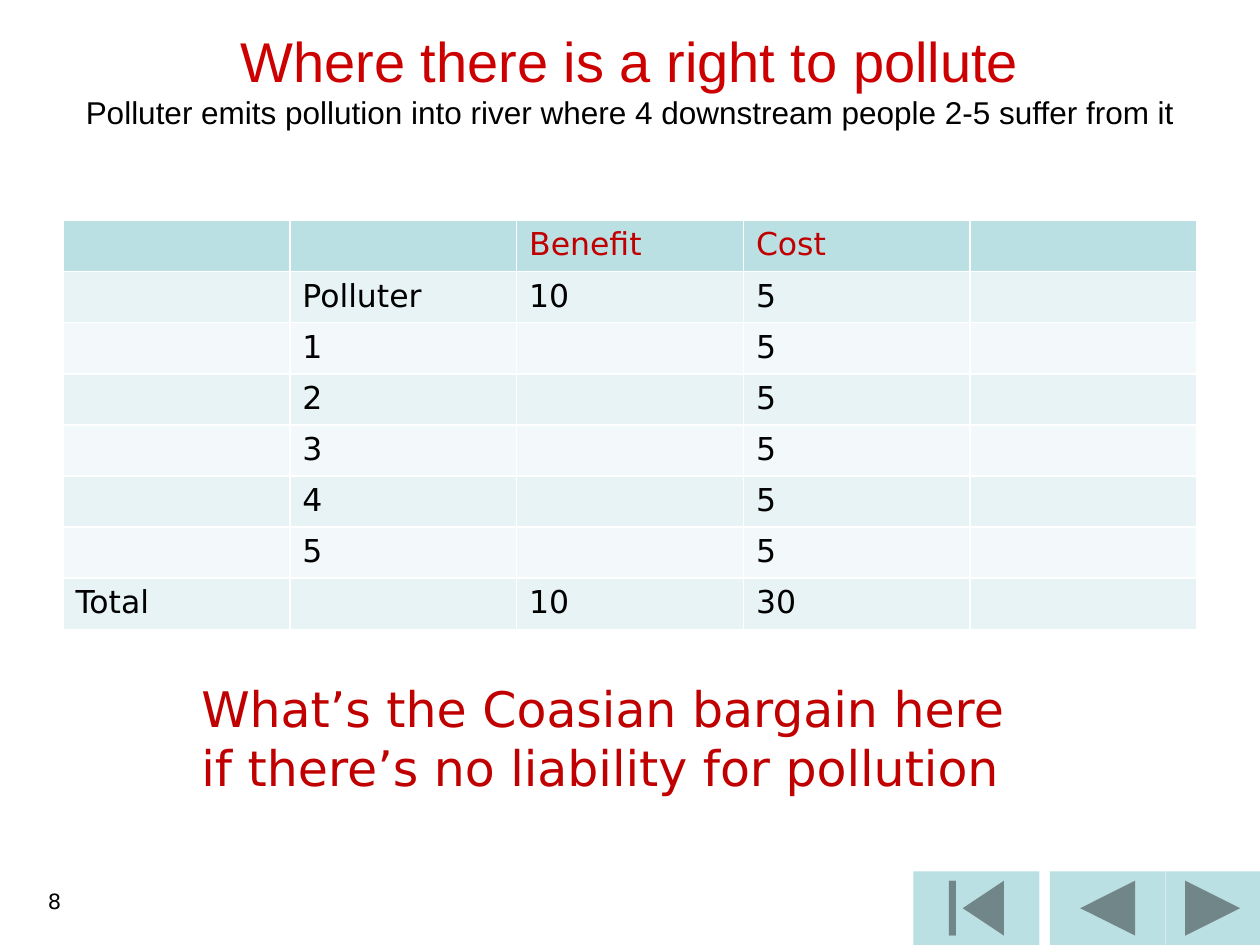
from dataclasses import dataclass

from lxml import etree
from pptx import Presentation
from pptx.dml.color import RGBColor
from pptx.enum.shapes import MSO_SHAPE
from pptx.enum.text import MSO_ANCHOR, PP_ALIGN
from pptx.oxml.ns import qn
from pptx.util import Pt

LEFT, CENTER, RIGHT = PP_ALIGN.LEFT, PP_ALIGN.CENTER, PP_ALIGN.RIGHT
TOP, MIDDLE = MSO_ANCHOR.TOP, MSO_ANCHOR.MIDDLE
BACK = MSO_SHAPE.ACTION_BUTTON_BACK_OR_PREVIOUS
BEGINNING = MSO_SHAPE.ACTION_BUTTON_BEGINNING
FORWARD = MSO_SHAPE.ACTION_BUTTON_FORWARD_OR_NEXT

COLORS = {
    "title": "CC0000",
    "accent": "C00000",
    "text": "000000",
    "teal": "BBE0E3",
    "odd_row": "E7F3F4",
    "even_row": "F3F9FA",
    "border": "FFFFFF",
}
BODY_FONT = "DejaVu Sans"
TITLE_FONT = "Arial"

ROWS = [
    ("", "", "Benefit", "Cost", ""),
    ("", "Polluter", "10", "5", ""),
    *[("", str(person), "", "5", "") for person in range(1, 6)],
    ("Total", "", "10", "30", ""),
]
COLUMN_WIDTH, ROW_HEIGHT = 129.6, 29.15


@dataclass
class Button:
    kind: MSO_SHAPE
    left: float
    width: float


@dataclass
class Style:
    size: float
    color: str
    font: str = BODY_FONT


@dataclass
class TextBox:
    """Text with one style for each run, in reading order."""
    text: str
    box: tuple[float, float, float, float]
    styles: list[Style]
    align: PP_ALIGN = LEFT
    anchor: MSO_ANCHOR = TOP
    wrap: bool = True


BUTTONS = [
    Button(BACK, 600, 66),
    Button(BEGINNING, 522, 72),
    Button(FORWARD, 666, 54),
]
QUESTION = Style(28, "accent")
TEXT_BOXES = [
    TextBox(
        "Where there is a right to pollute\v"
        "Polluter emits pollution into river where 4 downstream people 2-5 suffer from it",
        (0, 0, 720, 90),
        [Style(32, "title", TITLE_FONT), Style(18, "text", TITLE_FONT)],
        CENTER, MIDDLE,
    ),
    TextBox("8", (-108, 504, 150, 36), [Style(12, "text")], RIGHT),
    TextBox(
        "What’s the Coasian bargain here\nif there’s no liability for pollution",
        (108, 384, 488, 75), [QUESTION, QUESTION], wrap=False,
    ),
]


def rgb(name: str) -> RGBColor:
    return RGBColor.from_string(COLORS[name])


def format_run(r, style: Style) -> None:
    r.font.name = style.font
    r.font.size = Pt(style.size)
    r.font.bold = False
    r.font.color.rgb = rgb(style.color)


def add_button(slide, button: Button) -> None:
    s = slide.shapes.add_shape(
        button.kind, Pt(button.left), Pt(498), Pt(button.width), Pt(42))
    s.shadow.inherit = False
    s.fill.solid()
    s.fill.fore_color.rgb = rgb("teal")
    s.line.fill.background()


def add_text(slide, item: TextBox) -> None:
    tf = slide.shapes.add_textbox(*map(Pt, item.box)).text_frame
    tf.word_wrap = item.wrap
    tf.vertical_anchor = item.anchor
    tf.text = item.text
    for p in tf.paragraphs:
        p.alignment = item.align
    runs = [r for p in tf.paragraphs for r in p.runs]
    for r, style in zip(runs, item.styles):
        format_run(r, style)


def add_borders(cell) -> None:
    tc_pr = cell._tc.get_or_add_tcPr()
    for side in ("a:lnL", "a:lnR", "a:lnT", "a:lnB"):
        line = etree.SubElement(tc_pr, qn(side), w=str(Pt(1)))
        fill = etree.SubElement(line, qn("a:solidFill"))
        etree.SubElement(fill, qn("a:srgbClr"), val=COLORS["border"])


def add_cost_table(slide) -> None:
    n_rows, n_cols = len(ROWS), len(ROWS[0])
    table = slide.shapes.add_table(
        n_rows, n_cols, Pt(36), Pt(126),
        Pt(n_cols * COLUMN_WIDTH), Pt(n_rows * ROW_HEIGHT)).table
    for column in table.columns:
        column.width = Pt(COLUMN_WIDTH)
    for i, values in enumerate(ROWS):
        table.rows[i].height = Pt(ROW_HEIGHT)
        fill = "teal" if i == 0 else "odd_row" if i % 2 else "even_row"
        style = Style(18, "text" if i else "accent")
        for j, value in enumerate(values):
            cell = table.cell(i, j)
            add_borders(cell)
            cell.fill.solid()
            cell.fill.fore_color.rgb = rgb(fill)
            if value:
                cell.text_frame.text = value
                format_run(cell.text_frame.paragraphs[0].runs[0], style)


def main() -> None:
    prs = Presentation()
    prs.slide_width, prs.slide_height = Pt(720), Pt(540)
    slide = prs.slides.add_slide(prs.slide_layouts[6])
    for button in BUTTONS:
        add_button(slide, button)
    add_cost_table(slide)
    for item in TEXT_BOXES:
        add_text(slide, item)
    prs.save("out.pptx")


if __name__ == "__main__":
    main()
